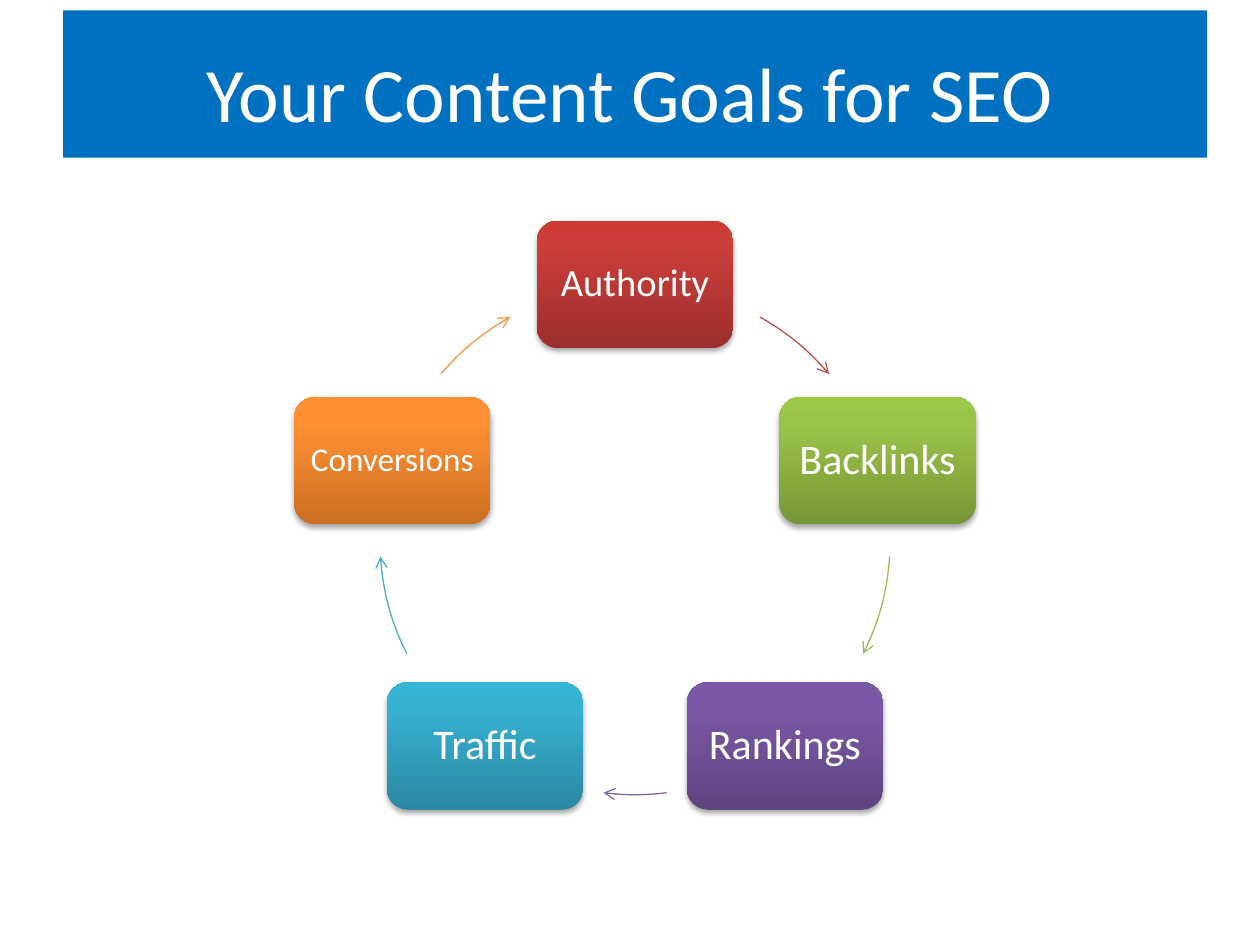
from copy import deepcopy
from dataclasses import dataclass
from math import cos, radians, sin

from lxml.etree import SubElement
from pptx import Presentation
from pptx.dml.color import RGBColor
from pptx.enum.shapes import MSO_SHAPE
from pptx.enum.text import MSO_ANCHOR, MSO_AUTO_SIZE, PP_ALIGN
from pptx.oxml.ns import qn
from pptx.util import Inches, Pt

FONT = "Calibri"
WHITE = RGBColor(0xFF, 0xFF, 0xFF)
BANNER_BLUE = RGBColor(0x00, 0x70, 0xC0)

SLIDE_WIDTH, SLIDE_HEIGHT = Inches(10), Inches(7.5)
CENTER_X, CENTER_Y = 0.504 * SLIDE_WIDTH, 0.571 * SLIDE_HEIGHT
RADIUS = 0.2025 * SLIDE_WIDTH
BOX_WIDTH, BOX_HEIGHT = 0.156 * SLIDE_WIDTH, 0.135 * SLIDE_HEIGHT
GRADIENT_POSITIONS = (0, 0.8, 1)


@dataclass(frozen=True)
class Stage:
    """One box of the cycle and the arrow leaving it; angles run clockwise from the top."""
    label: str
    size: int
    gradient: tuple[str, str, str]
    arrow_color: RGBColor
    arrow_start: float
    arrow_end: float


STAGES = (
    Stage("Authority", 22, ("9C2F2D", "CB3E3A", "CE3B37"),
          RGBColor(0xC0, 0x50, 0x4D), 29.3, 49.5),
    Stage("Backlinks", 24, ("779737", "9BC348", "9DC746"),
          RGBColor(0x9B, 0xBB, 0x59), 93.8, 116.6),
    Stage("Rankings", 24, ("5F4480", "7B58A6", "7C57A8"),
          RGBColor(0x80, 0x64, 0xA2), 172.9, 187.1),
    Stage("Traffic", 24, ("2A88A2", "37B1D2", "34B4D6"),
          RGBColor(0x4B, 0xAC, 0xC6), 243.4, 266.2),
    Stage("Conversions", 19, ("CC6E20", "FF9034", "FF9136"),
          RGBColor(0xF7, 0x96, 0x46), 310.5, 330.7),
)


def write_text(shape, text: str, *, size: int, anchor=MSO_ANCHOR.MIDDLE,
               margin_x: float = 0.1, margin_y: float = 0.1,
               line_spacing: float = 1.0) -> None:
    frame = shape.text_frame
    frame.word_wrap = True
    frame.auto_size = MSO_AUTO_SIZE.NONE
    frame.vertical_anchor = anchor
    frame.margin_left = frame.margin_right = Inches(margin_x)
    frame.margin_top = frame.margin_bottom = Inches(margin_y)
    paragraph = frame.paragraphs[0]
    paragraph.alignment = PP_ALIGN.CENTER
    paragraph.line_spacing = line_spacing
    run = paragraph.add_run()
    run.text = text
    run.font.name = FONT
    run.font.size = Pt(size)
    run.font.color.rgb = WHITE


def add_plain_shape(slide, kind, left: float, top: float, width: float, height: float):
    """Add a preset shape without a shadow."""
    shape = slide.shapes.add_shape(kind, *map(round, (left, top, width, height)))
    shape.shadow.inherit = False
    return shape


def fill_gradient(shape, colors: tuple[str, str, str]) -> None:
    """Fill from the bottom edge upwards with three stops."""
    shape.fill.gradient()
    shape.fill.gradient_angle = 90
    stop_list = shape.element.spPr.find(f".//{qn('a:gsLst')}")
    stop_list.append(deepcopy(stop_list[-1]))
    for stop, position, color in zip(shape.fill.gradient_stops, GRADIENT_POSITIONS, colors):
        stop.position = position
        stop.color.rgb = RGBColor.from_string(color)


def add_soft_shadow(shape) -> None:
    effects = shape.element.spPr.find(qn("a:effectLst"))
    shadow = SubElement(effects, qn("a:outerShdw"), blurRad=str(Pt(3.1)),
                        dist=str(Pt(1.8)), dir="5400000", rotWithShape="0")
    color = SubElement(shadow, qn("a:srgbClr"), val="000000")
    SubElement(color, qn("a:alpha"), val="35000")


def add_box(slide, stage: Stage, angle: float) -> None:
    left = CENTER_X + RADIUS * sin(radians(angle)) - BOX_WIDTH / 2
    top = CENTER_Y - RADIUS * cos(radians(angle)) - BOX_HEIGHT / 2
    box = add_plain_shape(slide, MSO_SHAPE.ROUNDED_RECTANGLE, left, top, BOX_WIDTH, BOX_HEIGHT)
    fill_gradient(box, stage.gradient)
    box.line.fill.background()
    add_soft_shadow(box)
    write_text(box, stage.label, size=stage.size, margin_x=0.04, line_spacing=0.9)


def add_arc_arrow(slide, stage: Stage) -> None:
    arc = add_plain_shape(slide, MSO_SHAPE.ARC, CENTER_X - RADIUS, CENTER_Y - RADIUS,
                          2 * RADIUS, 2 * RADIUS)
    for index, angle in enumerate((stage.arrow_start, stage.arrow_end)):
        # Arc angles start at three o'clock, in units of 1/60000 degree over 100000.
        arc.adjustments[index] = (angle - 90) % 360 * 0.6
    arc.fill.background()
    arc.line.color.rgb = stage.arrow_color
    arc.line.width = Pt(0.75)
    SubElement(arc.element.spPr.find(qn("a:ln")), qn("a:tailEnd"), type="arrow")


def add_title(slide) -> None:
    title = slide.shapes.title
    title.left, title.top = round(0.05 * SLIDE_WIDTH), round(0.04 * SLIDE_HEIGHT)
    title.width, title.height = round(0.9 * SLIDE_WIDTH), round(SLIDE_HEIGHT / 6)
    write_text(title, "Your Content Goals for SEO", size=44,
               anchor=MSO_ANCHOR.TOP, margin_y=0.06)
    banner = add_plain_shape(slide, MSO_SHAPE.RECTANGLE, 0.05 * SLIDE_WIDTH,
                             0.011 * SLIDE_HEIGHT, 0.908 * SLIDE_WIDTH, 0.156 * SLIDE_HEIGHT)
    banner.fill.solid()
    banner.fill.fore_color.rgb = BANNER_BLUE
    banner.line.fill.background()
    title.element.addprevious(banner.element)


def main() -> None:
    presentation = Presentation()
    presentation.slide_width, presentation.slide_height = SLIDE_WIDTH, SLIDE_HEIGHT
    slide = presentation.slides.add_slide(presentation.slide_layouts[5])
    add_title(slide)
    for index, stage in enumerate(STAGES):
        add_box(slide, stage, index * 360 / len(STAGES))
        add_arc_arrow(slide, stage)
    presentation.save("out.pptx")


if __name__ == "__main__":
    main()
